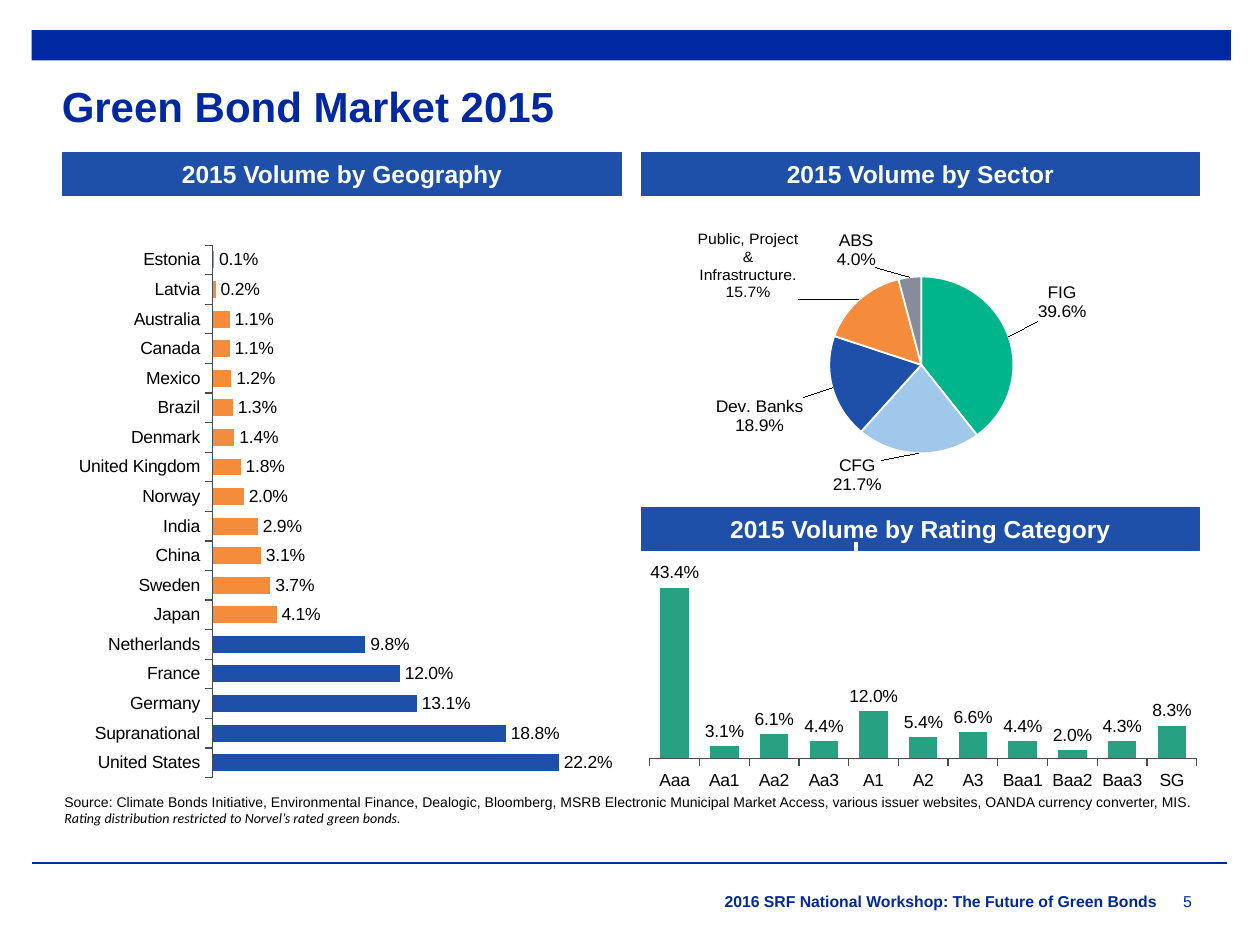
import pptx
import pptx.chart.data
import pptx.dml.color
import pptx.enum.chart
import pptx.enum.shapes
import pptx.enum.text
import pptx.oxml.ns
import pptx.util
from dataclasses import dataclass
from lxml import etree

Pt = pptx.util.Pt
qn = pptx.oxml.ns.qn
Kind = pptx.enum.chart.XL_CHART_TYPE
Spot = pptx.enum.chart.XL_LABEL_POSITION
Tick = pptx.enum.chart.XL_TICK_MARK
Side = pptx.enum.text.PP_ALIGN
Mid = pptx.enum.text.MSO_ANCHOR


@dataclass(frozen=True)
class Theme:
    navy: str = "0028A0"
    blue: str = "1E50AA"
    sky: str = "A0C8EA"
    mint: str = "00B58C"
    green: str = "28A082"
    gold: str = "F58C3C"
    gray: str = "878C9B"
    axis: str = "464B50"
    black: str = "000000"
    white: str = "FFFFFF"
    font: str = "Arial"
    alt: str = "Calibri"
    title: int = 24
    head: int = 14
    chart: int = 10
    foot: int = 9
    note: int = 8


T = Theme()
PERCENT = "0.0%"

LANDS = [("United States", .222), ("Supranational", .188), ("Germany", .131),
         ("France", .12), ("Netherlands", .098), ("Japan", .041), ("Sweden", .037),
         ("China", .031), ("India", .029), ("Norway", .02), ("United Kingdom", .018),
         ("Denmark", .014), ("Brazil", .013), ("Mexico", .012), ("Canada", .011),
         ("Australia", .011), ("Latvia", .002), ("Estonia", .001)]
GRADES = [("Aaa", .434), ("Aa1", .031), ("Aa2", .061), ("Aa3", .044), ("A1", .12),
          ("A2", .054), ("A3", .066), ("Baa1", .044), ("Baa2", .02), ("Baa3", .043),
          ("SG", .083)]
SECTORS = [("FIG", .396), ("CFG", .217), ("SOV", .189), ("PPIF", .157), ("ABS", .04)]
SLICES = [(T.mint, (.04, -.05), None),
          (T.sky, (-.11, 0), None),
          (T.blue, (-.04, .03), ["Dev. Banks", "18.9%"]),
          (T.gold, (-.1, .02), ["Public, Project & Infrastructure.", "15.7%"]),
          (T.gray, (-.06, -.01), None)]


def rgb(code):
    return pptx.dml.color.RGBColor.from_string(code)


def put(obj, **vals):
    for key, val in vals.items():
        setattr(obj, key, val)


def style(font, size, color, **vals):
    put(font, **{"name": T.font, "size": Pt(size), "bold": False, **vals})
    font.color.rgb = rgb(color)


def paint(fill, color):
    fill.solid()
    fill.fore_color.rgb = rgb(color)


def pens(box):
    return [Pt(n) for n in box]


def node(par, tag, **vals):
    return etree.SubElement(par, qn(tag), **vals)


def frame(tf, pad=0, **vals):
    put(tf, word_wrap=True, margin_left=Pt(pad), margin_right=Pt(pad),
        margin_top=Pt(pad), margin_bottom=Pt(pad), **vals)


def text(slide, box, words, side, bold=False):
    tf = slide.shapes.add_textbox(*pens(box)).text_frame
    frame(tf)
    line = tf.paragraphs[0]
    put(line, text=words, alignment=side)
    style(line.font, T.foot, T.navy, bold=bold)


def rule(slide, start, end, color, width):
    line = slide.shapes.add_connector(
        pptx.enum.shapes.MSO_CONNECTOR.STRAIGHT, *pens(start + end))
    line.line.width = Pt(width)
    line.line.color.rgb = rgb(color)
    node(line._element.spPr, "a:effectLst")


def bar(slide, box, color):
    shape = slide.shapes.add_shape(pptx.enum.shapes.MSO_SHAPE.RECTANGLE, *pens(box))
    shape.shadow.inherit = False
    paint(shape.fill, color)
    shape.line.fill.background()
    return shape


def band(slide, box, words):
    shape = bar(slide, box, T.blue)
    shape.line.color.rgb = rgb(T.blue)
    shape.line.width = Pt(.75)
    frame(shape.text_frame, vertical_anchor=Mid.MIDDLE)
    line = shape.text_frame.paragraphs[0]
    put(line, text=words, alignment=Side.CENTER)
    style(line.font, T.head, T.white, bold=True)


def layout(par, at, vals, inner=False):
    for old in par.findall(qn("c:layout")):
        par.remove(old)
    base = etree.Element(qn("c:layout"))
    man = node(base, "c:manualLayout")
    if inner:
        node(man, "c:layoutTarget", val="inner")
        node(man, "c:xMode", val="edge")
        node(man, "c:yMode", val="edge")
    for key, val in zip("xywh", vals):
        node(man, "c:" + key, val=str(val))
    par.insert(at, base)


def graph(slide, box, kind, rows, area):
    data = pptx.chart.data.CategoryChartData(number_format=PERCENT)
    data.categories = [name for name, _ in rows]
    data.add_series("Series 1", [val for _, val in rows])
    chart = slide.shapes.add_chart(kind, *pens(box), data).chart
    put(chart, has_title=False, has_legend=False)
    style(chart.font, T.chart, T.black)
    layout(chart._chartSpace.chart.plotArea, 0, area, True)
    plot = chart.plots[0]
    plot.has_data_labels = True
    put(plot.data_labels, show_value=True, number_format=PERCENT,
        number_format_is_linked=False, position=Spot.OUTSIDE_END)
    style(plot.data_labels.font, T.chart, T.black)
    return chart, plot


def bars(slide, box, kind, rows, area, color, top=None, lead=0):
    chart, plot = graph(slide, box, kind, rows, area)
    put(plot, gap_width=75, vary_by_categories=False)
    put(chart.value_axis, visible=False, has_major_gridlines=False, minimum_scale=0)
    if top:
        chart.value_axis.maximum_scale = top
    axis = chart.category_axis
    put(axis, major_tick_mark=Tick.OUTSIDE, has_major_gridlines=False)
    axis.format.line.color.rgb = rgb(T.axis)
    axis.format.line.width = Pt(.75)
    row = plot.series[0]
    row.invert_if_negative = False
    paint(row.format.fill, color)
    for num in range(lead):
        paint(row.points[num].format.fill, T.blue)


def pie(slide, box, rows, area):
    _, plot = graph(slide, box, Kind.PIE, rows, area)
    row = plot.series[0]
    tags = row.data_labels
    put(tags, show_value=True, show_category_name=True, number_format=PERCENT,
        number_format_is_linked=False, position=Spot.OUTSIDE_END)
    style(tags.font, T.chart, T.black)
    for num, (color, shift, words) in enumerate(SLICES):
        point = row.points[num]
        paint(point.format.fill, color)
        point.format.line.color.rgb = rgb(T.white)
        point.format.line.width = Pt(1)
        tag = point.data_label
        if words:
            tag.text_frame.text = "\n".join(words)
            size = T.foot if len(words[0]) > 20 else T.chart
            for line in tag.text_frame.paragraphs:
                style(line.runs[0].font, size, T.black)
        else:
            style(tag.font, T.chart, T.black)
        tag.position = Spot.OUTSIDE_END
        label = tag._dLbl
        label.find(qn("c:showCatName")).set("val", "1")
        node(label, "c:separator").text = "\n"
        layout(label, 1, shift)


def note(slide, box):
    table = slide.shapes.add_table(1, 1, *pens(box)).table
    put(table, first_row=False, horz_banding=False)
    cell = table.cell(0, 0)
    put(cell, margin_left=Pt(.75), margin_right=Pt(.75), margin_top=Pt(.75),
        margin_bottom=0, vertical_anchor=Mid.BOTTOM)
    props = cell._tc.get_or_add_tcPr()
    for edge in "LRTB":
        line = node(props, "a:ln" + edge, w=str(Pt(1)))
        node(node(line, "a:solidFill"), "a:srgbClr", val=T.white)
    cell.fill.background()
    first = cell.text_frame.paragraphs[0]
    first.text = ("Source: Climate Bonds Initiative, Environmental Finance, Dealogic, "
                  "Bloomberg, MSRB Electronic Municipal Market Access, various issuer "
                  "websites, OANDA currency converter, MIS.")
    style(first.font, T.note, T.black)
    last = cell.text_frame.add_paragraph()
    last.text = "Rating distribution restricted to Norvel’s rated green bonds."
    style(last.font, T.note, T.black, name=T.alt, italic=True)


def title(slide, box, words):
    shape = slide.shapes.title
    put(shape, **dict(zip(("left", "top", "width", "height"), pens(box))))
    frame(shape.text_frame, vertical_anchor=Mid.TOP)
    line = shape.text_frame.paragraphs[0]
    put(line, text=words, alignment=Side.LEFT, line_spacing=.85)
    style(line.font, T.title, T.navy, bold=True)


def trim(slide):
    rule(slide, (18, 493.2), (701.3, 493.2), T.navy, 1)
    bar(slide, (18, 17.3, 685.4, 17.3), T.navy)
    text(slide, (344.9, 509.8, 316, 12.2),
         "2016 SRF National Workshop: The Future of Green Bonds", Side.RIGHT, True)
    text(slide, (676.1, 509.8, 33.8, 12.2), "5", Side.LEFT)


def market(slide, left, right, top, width):
    band(slide, (left, top, width, 24.5), "2015 Volume by Geography")
    band(slide, (right, top, width, 24.5), "2015 Volume by Sector")
    band(slide, (right, top + 203, width, 24.5), "2015 Volume by Rating Category")
    pie(slide, (right, top + 41, 317.5, 196.6 - 40), SECTORS, (.338, .173, .332, .672))
    rule(slide, (right + 122.4, top + 222.5), (right + 122.4, top + 332.7), T.white, 2.25)
    bars(slide, (left, top + 41, width, 324.7), Kind.BAR_CLUSTERED, LANDS,
         (.268, .037, .643, .937), T.gold, .23, 5)
    bars(slide, (right, top + 228.2, width, 137.5), Kind.COLUMN_CLUSTERED, GRADES,
         (.015, .042, .98, .817), T.green)


def main():
    deck = pptx.Presentation()
    put(deck, slide_width=Pt(720), slide_height=Pt(540))
    slide = deck.slides.add_slide(deck.slide_layouts[5])
    trim(slide)
    title(slide, (35.3, 50.4, 648, 24.5), "Green Bond Market 2015")
    market(slide, 36, 366.5, 87.1, 319)
    note(slide, (36, 452.9, 650.2, 20))
    deck.save("out.pptx")


if __name__ == "__main__":
    main()
